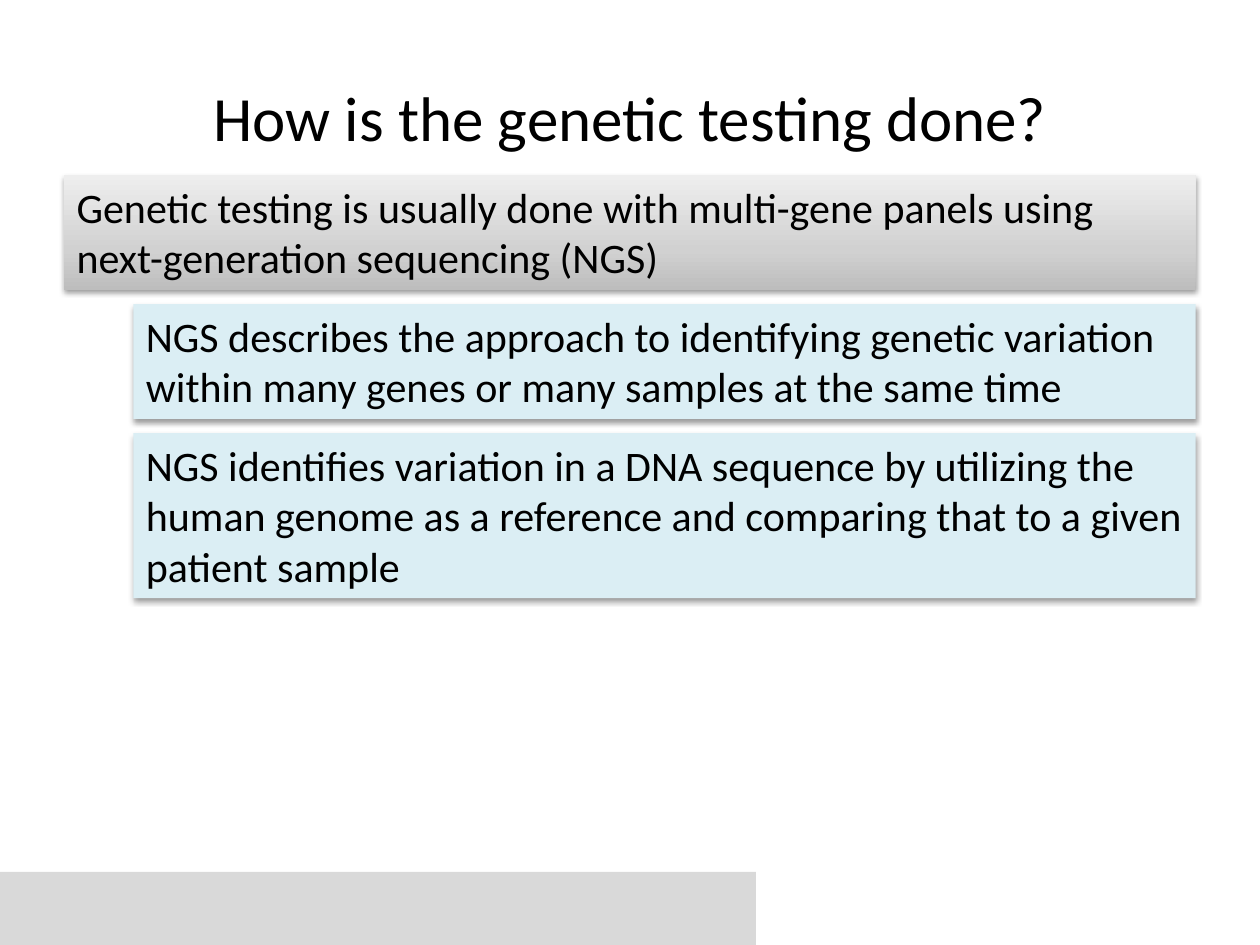
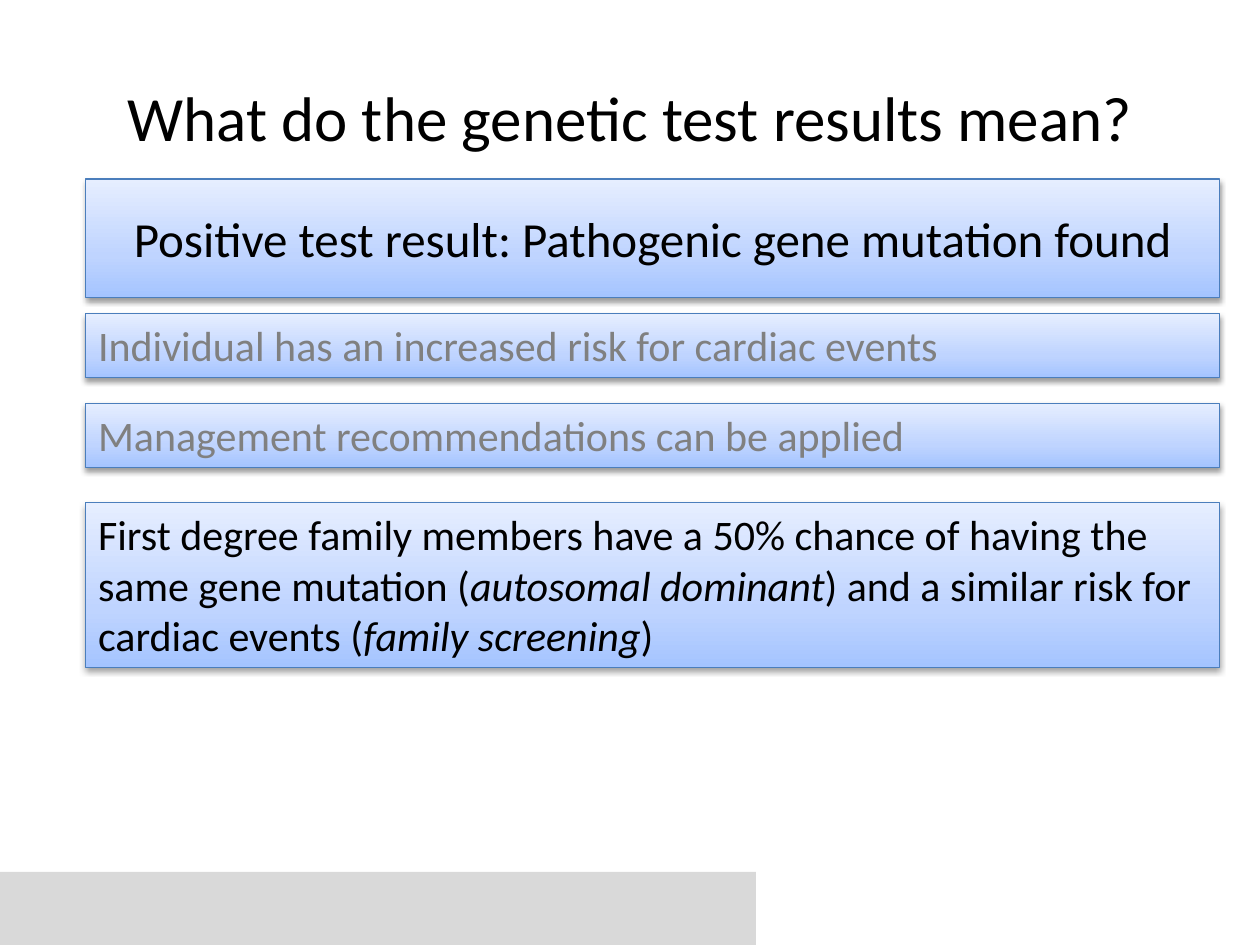
from dataclasses import dataclass
from typing import Optional

from lxml import etree
from pptx import Presentation
from pptx.dml.color import RGBColor
from pptx.enum.shapes import MSO_SHAPE
from pptx.enum.text import MSO_ANCHOR, MSO_AUTO_SIZE, PP_ALIGN
from pptx.oxml.ns import qn
from pptx.util import Inches, Pt

RECTANGLE = MSO_SHAPE.RECTANGLE
LEFT, CENTER = PP_ALIGN.LEFT, PP_ALIGN.CENTER
TOP, MIDDLE = MSO_ANCHOR.TOP, MSO_ANCHOR.MIDDLE
GROW, FIXED = MSO_AUTO_SIZE.SHAPE_TO_FIT_TEXT, MSO_AUTO_SIZE.NONE

SLIDE_W, SLIDE_H = Inches(10), Inches(7.5)
FONT = "Calibri"
BLACK = RGBColor(0x00, 0x00, 0x00)
DIMMED = RGBColor(0x80, 0x80, 0x80)
BAND_GRAY = RGBColor(0xD9, 0xD9, 0xD9)
PALE_AQUA = RGBColor(0xDB, 0xEE, 0xF4)
BLUE_EDGE = RGBColor(0x4B, 0x7E, 0xBC)
STOPS = (0, 35, 100)
GRAY_BLEND = (RGBColor(0xBD, 0xBD, 0xBD), RGBColor(0xD1, 0xD1, 0xD1), RGBColor(0xEE, 0xEE, 0xEE))
BLUE_BLEND = (RGBColor(0xA4, 0xC4, 0xFF), RGBColor(0xBF, 0xD4, 0xFF), RGBColor(0xE6, 0xEE, 0xFF))

# Panel heights, as percent of the slide's height
LINE_HEIGHT = 5.33
PANEL_PADDING = 1.47


@dataclass(frozen=True)
class Look:
    """Left and width are percent of the slide's width."""
    left: float
    width: float
    fill: tuple[RGBColor, ...]
    edge: Optional[RGBColor] = None


@dataclass(frozen=True)
class Panel:
    """Runs alternate between upright and italic; gap is percent of the slide's height."""
    runs: tuple[str, ...]
    look: Look
    lines: int = 1
    gap: float = 0
    color: RGBColor = BLACK
    heading: bool = False

    @property
    def height(self) -> float:
        return 12.53 if self.heading else PANEL_PADDING + LINE_HEIGHT * self.lines


@dataclass(frozen=True)
class Page:
    title: str
    top: float
    panels: tuple[Panel, ...]


STATEMENT = Look(5.1, 89.8, GRAY_BLEND)
DETAIL = Look(10.6, 84.3, (PALE_AQUA,))
RESULT = Look(6.8, 90, BLUE_BLEND, BLUE_EDGE)

PAGES = (
    Page("How is the genetic testing done?", 18.53, (
        Panel(("Genetic testing is usually done with multi-gene panels using "
               "next-generation sequencing (NGS)",), STATEMENT, lines=2),
        Panel(("NGS describes the approach to identifying genetic variation "
               "within many genes or many samples at the same time",),
              DETAIL, lines=2, gap=1.53),
        Panel(("NGS identifies variation in a DNA sequence by utilizing the human genome "
               "as a reference and comparing that to a given patient sample",),
              DETAIL, lines=3, gap=1.53),
    )),
    Page("What do the genetic test results mean?", 18.93, (
        Panel(("Positive test result: Pathogenic gene mutation found",), RESULT, heading=True),
        Panel(("Individual has an increased risk for cardiac events",),
              RESULT, gap=1.73, color=DIMMED),
        Panel(("Management recommendations can be applied",),
              RESULT, gap=2.67, color=DIMMED),
        Panel(("First degree family members have a 50% chance of having the same gene mutation (",
               "autosomal dominant", ") and a similar risk for cardiac events (",
               "family screening", ")"), RESULT, lines=3, gap=3.73),
    )),
)


def across(percent: float) -> int:
    return round(SLIDE_W * percent / 100)


def down(percent: float) -> int:
    return round(SLIDE_H * percent / 100)


def write(frame, runs: tuple[str, ...], *, size: float, color: RGBColor = BLACK,
          align=LEFT, anchor=TOP, fit=FIXED) -> None:
    frame.word_wrap = True
    frame.auto_size = fit
    frame.vertical_anchor = anchor
    paragraph = frame.paragraphs[0]
    paragraph.alignment = align
    for index, words in enumerate(runs):
        run = paragraph.add_run()
        run.text = words
        run.font.name = FONT
        run.font.size = Pt(size)
        run.font.color.rgb = color
        run.font.italic = index % 2 == 1


def paint(shape, colors: tuple[RGBColor, ...]) -> None:
    """Fill with one colour, or blend several from the bottom up."""
    if len(colors) == 1:
        shape.fill.solid()
        shape.fill.fore_color.rgb = colors[0]
        return
    shape.fill.gradient()
    shape.fill.gradient_angle = 90
    stop_list = shape.element.spPr.find(qn("a:gradFill")).find(qn("a:gsLst"))
    for stop in list(stop_list):
        stop_list.remove(stop)
    for position, color in zip(STOPS, colors):
        stop = etree.SubElement(stop_list, qn("a:gs"), pos=str(position * 1000))
        etree.SubElement(stop, qn("a:srgbClr"), val=str(color))


def cast_shadow(shape) -> None:
    effects = shape.element.spPr.find(qn("a:effectLst"))
    shadow = etree.SubElement(effects, qn("a:outerShdw"), blurRad="40000", dist="20000",
                              dir="5400000", rotWithShape="0")
    color = etree.SubElement(shadow, qn("a:srgbClr"), val=str(BLACK))
    etree.SubElement(color, qn("a:alpha"), val="38000")


def add_box(slide, left: float, top: float, width: float, height: float,
            fill: tuple[RGBColor, ...], edge: Optional[RGBColor] = None):
    box = slide.shapes.add_shape(RECTANGLE, across(left), down(top), across(width), down(height))
    paint(box, fill)
    if edge is None:
        box.line.fill.background()
    else:
        box.line.color.rgb = edge
        box.line.width = Pt(0.75)
    box.shadow.inherit = False
    return box


def add_panel(slide, panel: Panel, top: float) -> None:
    look = panel.look
    box = add_box(slide, look.left, top, look.width, panel.height, look.fill, look.edge)
    cast_shadow(box)
    if panel.heading:
        write(box.text_frame, panel.runs, size=28, color=panel.color, align=CENTER, anchor=MIDDLE)
    else:
        write(box.text_frame, panel.runs, size=24, color=panel.color, fit=GROW)


def add_page(deck, page: Page) -> None:
    slide = deck.slides.add_slide(deck.slide_layouts[5])
    add_box(slide, 0, 92.27, 60, 7.73, (BAND_GRAY,))
    title = slide.shapes.title
    title.left, title.top = across(5), down(4)
    title.width, title.height = across(90), down(16.67)
    write(title.text_frame, (page.title,), size=36, align=CENTER, anchor=MIDDLE)
    top = page.top
    for panel in page.panels:
        top += panel.gap
        add_panel(slide, panel, top)
        top += panel.height


def main() -> None:
    deck = Presentation()
    deck.slide_width, deck.slide_height = SLIDE_W, SLIDE_H
    for page in PAGES:
        add_page(deck, page)
    deck.save("out.pptx")


if __name__ == "__main__":
    main()
